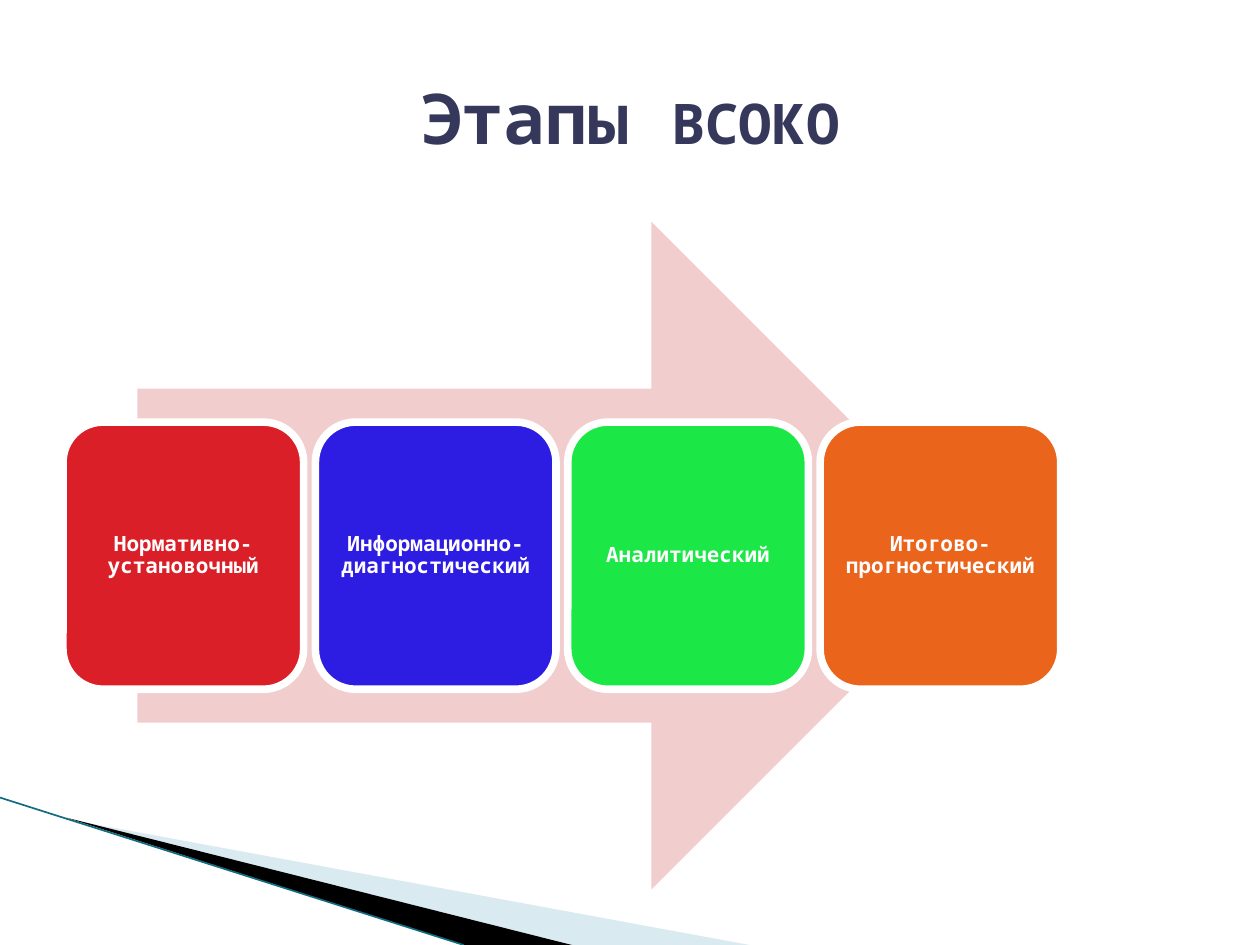
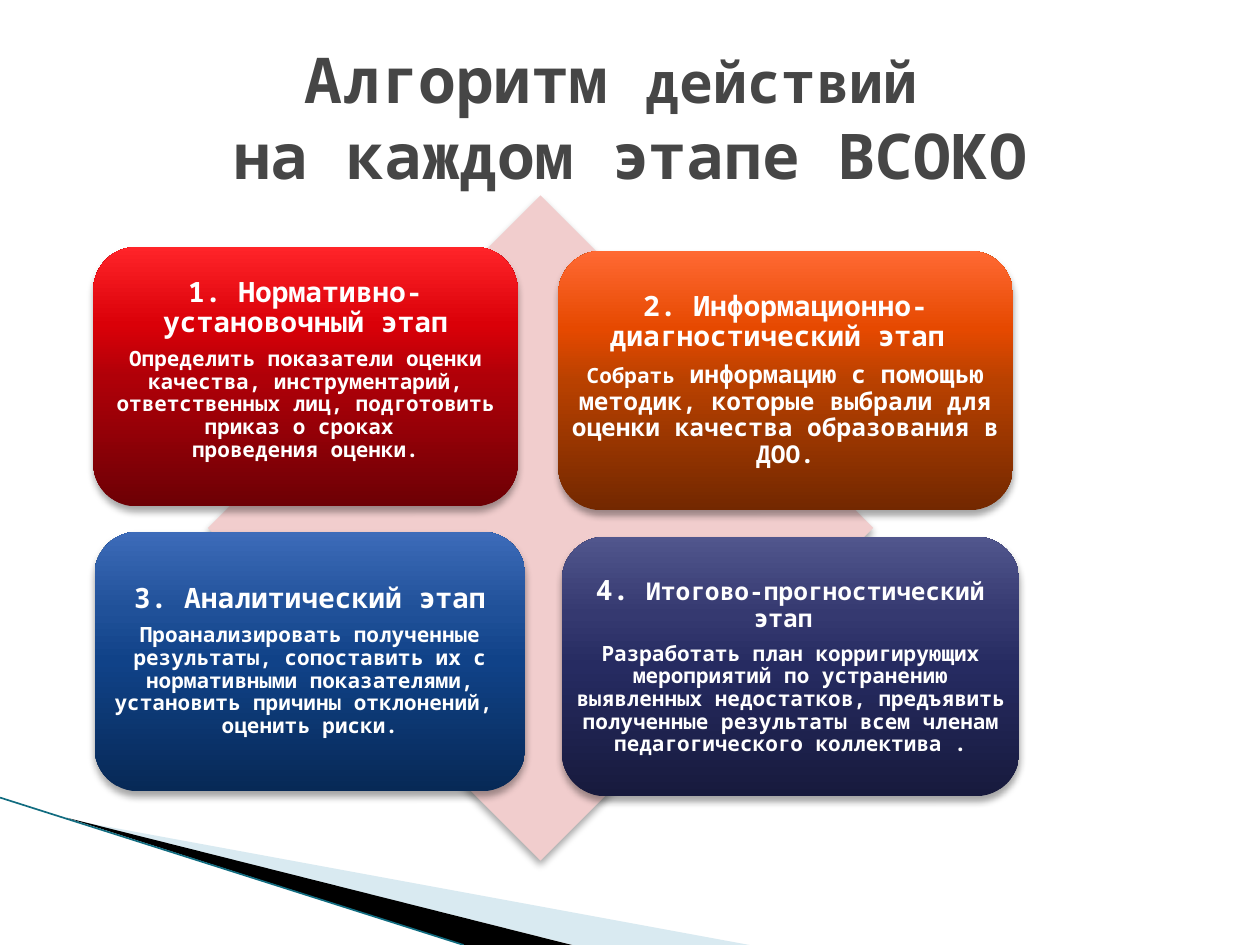
"""Build two slides on the stages of quality assessment, on a grid of 100 columns by 75 rows."""
from dataclasses import dataclass
from typing import NamedTuple

from lxml import etree
from pptx import Presentation, util as u
from pptx.dml.color import RGBColor
from pptx.enum import shapes, text
from pptx.oxml import ns

WIDE, HIGH = u.Inches(10), u.Inches(7.5)
COLS, ROWS = 100, 75
FACE = "Noto Sans Mono"
WHITE = RGBColor(0xFF, 0xFF, 0xFF)
BLACK = RGBColor(0x00, 0x00, 0x00)
PALE = RGBColor(0xA0, 0xCB, 0xDC)
TEAL = RGBColor(0x11, 0x6C, 0x80)
PINK = RGBColor(0xF1, 0xCD, 0xCD)
NAVY = RGBColor(0x35, 0x38, 0x5A)
GREY = RGBColor(0x46, 0x46, 0x46)
RED = RGBColor(0xDA, 0x1F, 0x28)
BLUE = RGBColor(0x2D, 0x1C, 0xE1)
GREEN = RGBColor(0x1B, 0xE7, 0x47)
AMBER = RGBColor(0xEB, 0x64, 0x1B)
STOPS = (0, 50, 70, 100)
RUBY = [RGBColor(0x6D, 0x00, 0x05), RGBColor(0xB0, 0x00, 0x08),
        RGBColor(0xDA, 0x00, 0x08), RGBColor(0xFF, 0x24, 0x29)]
RUST = [RGBColor(0x73, 0x28, 0x00), RGBColor(0xB9, 0x41, 0x00),
        RGBColor(0xE6, 0x49, 0x00), RGBColor(0xFF, 0x69, 0x33)]
SEA = [RGBColor(0x07, 0x29, 0x56), RGBColor(0x10, 0x42, 0x88),
       RGBColor(0x20, 0x51, 0x99), RGBColor(0x3D, 0x6B, 0xB9)]
DUSK = [RGBColor(0x17, 0x1A, 0x3D), RGBColor(0x26, 0x2B, 0x61),
        RGBColor(0x35, 0x39, 0x70), RGBColor(0x51, 0x56, 0x8D)]


class Run(NamedTuple):
    words: str
    size: float


class Box(NamedTuple):
    col: float
    row: float
    cols: float
    rows: float


@dataclass
class Stage:
    name: str
    color: RGBColor


@dataclass
class Card:
    box: Box
    tones: list[RGBColor]
    head: list[Run]
    body: list[Run]
    lift: float = 0


HEAD = Box(5, 3, 90, 12.5)
ARROW = Box(10.9, 17.6, 67.3, 53)
GEM = Box(16.5, 15.5, 52.8, 52.8)
FIRST = Box(5, 33.5, 19.1, 21.2)
STEP = 20.03

STAGES = [
    Stage("Нормативно-установочный", RED),
    Stage("Информационно-диагностический", BLUE),
    Stage("Аналитический", GREEN),
    Stage("Итогово-прогностический", AMBER),
]

CARDS = [
    Card(Box(7.4, 19.6, 33.7, 20.6), RUBY,
         [Run("1. Нормативно-установочный этап", 16)],
         [Run("Определить показатели оценки качества, инструментарий, ответственных лиц, "
              "подготовить приказ о сроках \nпроведения оценки.", 12)], 1.1),
    Card(Box(44.3, 19.9, 36.1, 20.6), RUST,
         [Run("2. Информационно-диагностический этап ", 16)],
         [Run("Собрать", 12),
          Run(" информацию с помощью методик, которые выбрали для оценки "
              "качества образования в ДОО.", 14)]),
    Card(Box(7.5, 42.2, 34.2, 20.6), SEA,
         [Run("3. Аналитический этап", 16)],
         [Run("Проанализировать полученные результаты, сопоставить их с нормативными "
              "показателями, установить причины отклонений, \nоценить риски.", 12)]),
    Card(Box(44.6, 42.6, 36.3, 20.6), DUSK,
         [Run("4. ", 16), Run("Итогово-прогностический этап ", 14)],
         [Run("Разработать план корригирующих мероприятий по устранению выявленных "
              "недостатков, предъявить полученные результаты всем членам "
              "педагогического коллектива .", 12)]),
]


def horiz(cols: float) -> int:
    """Turn grid columns into a length."""
    return int(WIDE * cols / COLS)


def vert(rows: float) -> int:
    """Turn grid rows into a length."""
    return int(HIGH * rows / ROWS)


def place(box: Box) -> tuple[int, int, int, int]:
    """Turn a grid box into left, top, width and height."""
    return horiz(box.col), vert(box.row), horiz(box.cols), vert(box.rows)


def write(para, runs: list[Run], color: RGBColor) -> None:
    """Add centred bold runs, with a line break at each newline."""
    para.alignment = text.PP_ALIGN.CENTER
    for words, size in runs:
        for num, line in enumerate(words.split("\n")):
            if num:
                para.add_line_break()
            run = para.add_run()
            run.text = line
            font = run.font
            font.name, font.size, font.bold = FACE, u.Pt(size), True
            font.color.rgb = color


def fill_in(shape, paras: list[list[Run]], lift: float = 0) -> None:
    """Write white paragraphs into a shape, raised by extra room below."""
    frame = shape.text_frame
    frame.word_wrap = True
    frame.vertical_anchor = text.MSO_ANCHOR.MIDDLE
    frame.margin_left = frame.margin_right = frame.margin_top = 0
    frame.margin_bottom = vert(lift)
    for num, runs in enumerate(paras):
        para = frame.add_paragraph() if num else frame.paragraphs[0]
        para.line_spacing = 0.9
        if num < len(paras) - 1:
            para.space_after = u.Pt(5.6)
        write(para, runs, WHITE)


def paint(shape, color: RGBColor) -> None:
    """Give a shape a flat fill without line or shadow."""
    shape.shadow.inherit = False
    shape.fill.solid()
    shape.fill.fore_color.rgb = color
    shape.line.fill.background()


def tone(root, color: RGBColor, alpha: int = 100) -> None:
    """Append a colour element with its opacity in percent."""
    node = etree.SubElement(root, ns.qn("a:srgbClr"), val=str(color))
    if alpha < 100:
        etree.SubElement(node, ns.qn("a:alpha"), val=str(alpha * 1000))


def shade(shape) -> None:
    """Drop a soft shadow straight below a shape."""
    node = shape._element.spPr.find(ns.qn("a:effectLst"))
    drop = etree.SubElement(node, ns.qn("a:outerShdw"), blurRad=str(u.Pt(4)),
                            dist=str(u.Pt(3)), dir="5400000", rotWithShape="0")
    tone(drop, BLACK, 35)


def blend(shape, tones: list[RGBColor]) -> None:
    """Fill a shape with a gradient that rises from the bottom."""
    shape.fill.gradient()
    shape.fill.gradient_angle = 90
    stops = shape._element.spPr.find(".//" + ns.qn("a:gsLst"))
    for old in list(stops):
        stops.remove(old)
    for pos, color in zip(STOPS, tones):
        tone(etree.SubElement(stops, ns.qn("a:gs"), pos=str(pos * 1000)), color)


def wedge(slide, points: list[tuple[float, float]], color: RGBColor):
    """Draw a closed outline through grid points."""
    spots = [(horiz(col), vert(row)) for col, row in points]
    pen = slide.shapes.build_freeform(*spots[0])
    pen.add_line_segments(spots[1:])
    shape = pen.convert_to_shape()
    paint(shape, color)
    return shape


def base(deck, title: list[Run], color: RGBColor):
    """Add a slide with the corner wedges and a title."""
    slide = deck.slides.add_slide(deck.slide_layouts[5])
    light = wedge(slide, [(5.5, 65.05), (59.5, 75), (45.5, 75)], PALE)
    node = light._element.spPr.find(".//" + ns.qn("a:srgbClr"))
    etree.SubElement(node, ns.qn("a:alpha"), val="40000")
    wedge(slide, [(5.3, 64.9), (45.4, 75), (36.8, 75)], BLACK)
    edge = slide.shapes.add_connector(shapes.MSO_CONNECTOR.STRAIGHT, 0, vert(63.3),
                                      horiz(36.8), HIGH)
    edge.line.color.rgb, edge.line.width = TEAL, u.Pt(0.95)
    etree.SubElement(edge._element.spPr, ns.qn("a:effectLst"))
    head = slide.shapes.title
    head.left, head.top, head.width, head.height = place(HEAD)
    frame = head.text_frame
    frame.auto_size = text.MSO_AUTO_SIZE.NONE
    frame.vertical_anchor = text.MSO_ANCHOR.MIDDLE
    write(frame.paragraphs[0], title, color)
    return slide


def draw(slide, kind: shapes.MSO_SHAPE, box: Box, color: RGBColor):
    """Draw a flat preset shape in a grid box."""
    shape = slide.shapes.add_shape(kind, *place(box))
    paint(shape, color)
    return shape


def show_steps(deck) -> None:
    """Build the slide with the four stages on an arrow."""
    slide = base(deck, [Run("Этапы ", 40), Run("ВСОКО", 32)], NAVY)
    draw(slide, shapes.MSO_SHAPE.RIGHT_ARROW, ARROW, PINK)
    for num, stage in enumerate(STAGES):
        box = FIRST._replace(col=FIRST.col + num * STEP)
        tile = draw(slide, shapes.MSO_SHAPE.ROUNDED_RECTANGLE, box, stage.color)
        tile.line.color.rgb, tile.line.width = WHITE, u.Pt(4.33)
        fill_in(tile, [[Run(stage.name, 12)]])


def show_tasks(deck) -> None:
    """Build the slide with the actions of each stage on a diamond."""
    slide = base(deck, [Run("Алгоритм ", 36), Run("действий", 32.4),
                        Run(" \nна каждом этапе ВСОКО", 36)], GREY)
    shade(draw(slide, shapes.MSO_SHAPE.DIAMOND, GEM, PINK))
    for card in CARDS:
        tile = draw(slide, shapes.MSO_SHAPE.ROUNDED_RECTANGLE, card.box, card.tones[0])
        blend(tile, card.tones)
        shade(tile)
        fill_in(tile, [card.head, card.body], card.lift)


def main() -> None:
    """Build and save the deck."""
    deck = Presentation()
    deck.slide_width, deck.slide_height = WIDE, HIGH
    show_steps(deck)
    show_tasks(deck)
    deck.save("out.pptx")


if __name__ == "__main__":
    main()
